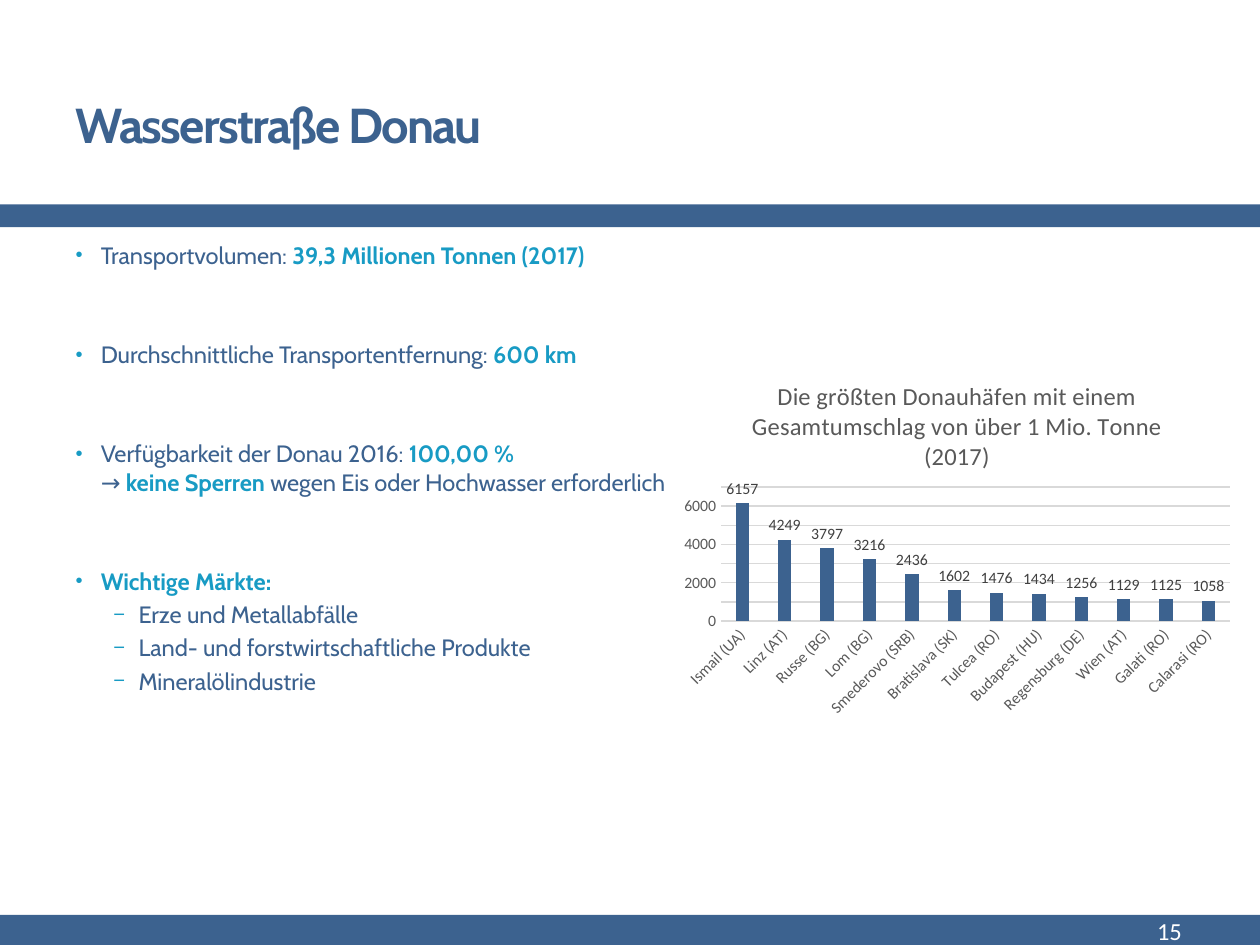
from lxml import etree
from pptx import Presentation
from pptx import util as u
from pptx.chart import data as chart_data
from pptx.dml.color import RGBColor
from pptx.enum import chart as chart_enum
from pptx.enum import shapes, text
from pptx.oxml.ns import qn

NAVY = RGBColor(0x3C, 0x62, 0x8F)
CYAN = RGBColor(0x18, 0x9B, 0xC4)
WHITE = RGBColor(0xFF, 0xFF, 0xFF)
GRAY = RGBColor(0x59, 0x59, 0x59)
DARK_GRAY = RGBColor(0x40, 0x40, 0x40)
GRID_GRAY = RGBColor(0xD9, 0xD9, 0xD9)

BODY_SIZE = 13.5
ITEM_GAP = 2.8
TOPIC_GAP = 40.5

TOPICS = [
    ([("Transportvolumen: ", False), ("39,3 Millionen Tonnen (2017)", True)], []),
    ([("Durchschnittliche Transportentfernung: ", False), ("600 km", True)], []),
    ([("Verfügbarkeit der Donau 2016: ", False), ("100,00 %", True), ("\n", False),
      ("→ ", False), ("keine Sperren ", True),
      ("wegen Eis oder Hochwasser erforderlich", False)], []),
    ([("Wichtige Märkte:", True)],
     ["Erze und Metallabfälle", "Land- und forstwirtschaftliche Produkte", "Mineralölindustrie"]),
]

CHART_TITLE = "Die größten Donauhäfen mit einem Gesamtumschlag von über 1 Mio. Tonne (2017)"
PORTS = {
    "Ismail (UA)": 6157, "Linz (AT)": 4249, "Russe (BG)": 3797, "Lom (BG)": 3216,
    "Smederovo (SRB)": 2436, "Bratislava (SK)": 1602, "Tulcea (RO)": 1476,
    "Budapest (HU)": 1434, "Regensburg (DE)": 1256, "Wien (AT)": 1129,
    "Galati (RO)": 1125, "Calarasi (RO)": 1058,
}


def place(shape, left, top, width, height):
    shape.left, shape.top = u.Pt(left), u.Pt(top)
    shape.width, shape.height = u.Pt(width), u.Pt(height)


def style_font(font, name, size, color, bold=False):
    font.name = name
    font.size = u.Pt(size)
    font.bold = bold
    font.color.rgb = color


def add_bar(slide, top, height):
    bar = slide.shapes.add_shape(
        shapes.MSO_SHAPE.RECTANGLE, 0, u.Pt(top), u.Pt(720), u.Pt(height))
    bar.shadow.inherit = False
    bar.fill.solid()
    bar.fill.fore_color.rgb = NAVY
    bar.line.fill.background()


def fill_title(title):
    place(title, 36, 31.7, 375, 77.8)
    frame = title.text_frame
    frame.text = "Wasserstraße Donau"
    frame.auto_size = text.MSO_AUTO_SIZE.NONE
    frame.vertical_anchor = text.MSO_ANCHOR.MIDDLE
    paragraph = frame.paragraphs[0]
    paragraph.alignment = text.PP_ALIGN.LEFT
    run = paragraph.runs[0]
    style_font(run.font, "Cabin", 28, NAVY, True)
    run._r.get_or_add_rPr().set("spc", "-100")


def set_bullet(paragraph, character, indent):
    properties = paragraph._p.get_or_add_pPr()
    properties.set("marL", str(u.Pt(indent)))
    properties.set("indent", str(u.Pt(-14.4)))
    color = etree.SubElement(properties, qn("a:buClr"))
    etree.SubElement(color, qn("a:srgbClr"), val=str(CYAN))
    etree.SubElement(properties, qn("a:buSzPct"), val="85000")
    etree.SubElement(properties, qn("a:buChar"), char=character)


def add_line_break(paragraph):
    paragraph.add_line_break()
    line_break = paragraph._p.findall(qn("a:br"))[-1]
    etree.SubElement(line_break, qn("a:rPr"), sz=str(int(BODY_SIZE * 100)))


def write_item(paragraph, segments, level, gap):
    paragraph.level = level
    set_bullet(paragraph, "•−"[level], (14.4, 36)[level])
    paragraph.alignment = text.PP_ALIGN.LEFT
    paragraph.space_before = u.Pt(gap)
    for content, highlighted in segments:
        if content == "\n":
            add_line_break(paragraph)
            continue
        run = paragraph.add_run()
        run.text = content
        style_font(run.font, "Cabin", BODY_SIZE, CYAN if highlighted else NAVY, highlighted)


def fill_body(body):
    place(body, 36, 134, 648, 376)
    frame = body.text_frame
    frame.auto_size = text.MSO_AUTO_SIZE.NONE
    frame.vertical_anchor = text.MSO_ANCHOR.TOP
    for index, (segments, subitems) in enumerate(TOPICS):
        paragraph = frame.add_paragraph() if index else frame.paragraphs[0]
        write_item(paragraph, segments, 0, TOPIC_GAP if index else 0)
        for subitem in subitems:
            write_item(frame.add_paragraph(), [(subitem, False)], 1, ITEM_GAP)


def add_page_number(slide):
    box = slide.shapes.add_textbox(u.Pt(598.3), u.Pt(519.1), u.Pt(84.2), u.Pt(25.9))
    frame = box.text_frame
    frame.word_wrap = True
    frame.vertical_anchor = text.MSO_ANCHOR.MIDDLE
    frame.text = "15"
    paragraph = frame.paragraphs[0]
    paragraph.alignment = text.PP_ALIGN.RIGHT
    style_font(paragraph.runs[0].font, "Calibri", 14, WHITE)


def style_axis(axis):
    axis.major_tick_mark = chart_enum.XL_TICK_MARK.NONE
    axis.minor_tick_mark = chart_enum.XL_TICK_MARK.NONE
    style_font(axis.tick_labels.font, "Calibri", 9, GRAY)


def style_line(line):
    line.color.rgb = GRID_GRAY
    line.width = u.Pt(0.75)


def style_axes(chart):
    categories, values = chart.category_axis, chart.value_axis
    style_axis(categories)
    style_line(categories.format.line)
    label_body = categories._element.find(qn("c:txPr")).find(qn("a:bodyPr"))
    label_body.set("rot", "-2700000")
    style_axis(values)
    values.minimum_scale, values.maximum_scale, values.major_unit = 0, 7000, 1000
    values.format.line.fill.background()
    values.has_major_gridlines = True
    style_line(values.major_gridlines.format.line)


def add_port_chart(slide):
    ports = chart_data.CategoryChartData()
    ports.categories = list(PORTS)
    ports.add_series(CHART_TITLE, list(PORTS.values()))
    chart = slide.shapes.add_chart(
        chart_enum.XL_CHART_TYPE.COLUMN_CLUSTERED,
        u.Pt(384.5), u.Pt(206), u.Pt(324.7), u.Pt(208), ports).chart
    chart.font.name = "Calibri"
    chart.font.size = u.Pt(10)
    chart.has_legend = False
    chart.has_title = True
    chart.chart_title.include_in_layout = False
    title_frame = chart.chart_title.text_frame
    title_frame.text = CHART_TITLE
    style_font(title_frame.paragraphs[0].runs[0].font, "Calibri", 14, GRAY)
    style_axes(chart)
    plot = chart.plots[0]
    plot.gap_width = 219
    plot.vary_by_categories = False
    series = plot.series[0]
    series.format.fill.solid()
    series.format.fill.fore_color.rgb = NAVY
    labels = series.data_labels
    labels.show_value = True
    labels.position = chart_enum.XL_LABEL_POSITION.OUTSIDE_END
    style_font(labels.font, "Calibri", 9, DARK_GRAY)


def main():
    presentation = Presentation()
    presentation.slide_width, presentation.slide_height = u.Pt(720), u.Pt(540)
    slide = presentation.slides.add_slide(presentation.slide_layouts[1])
    add_bar(slide, 522.8, 17.2)
    add_bar(slide, 116.8, 13)
    fill_title(slide.shapes.title)
    fill_body(slide.placeholders[1])
    add_page_number(slide)
    add_port_chart(slide)
    presentation.save("out.pptx")


if __name__ == "__main__":
    main()
